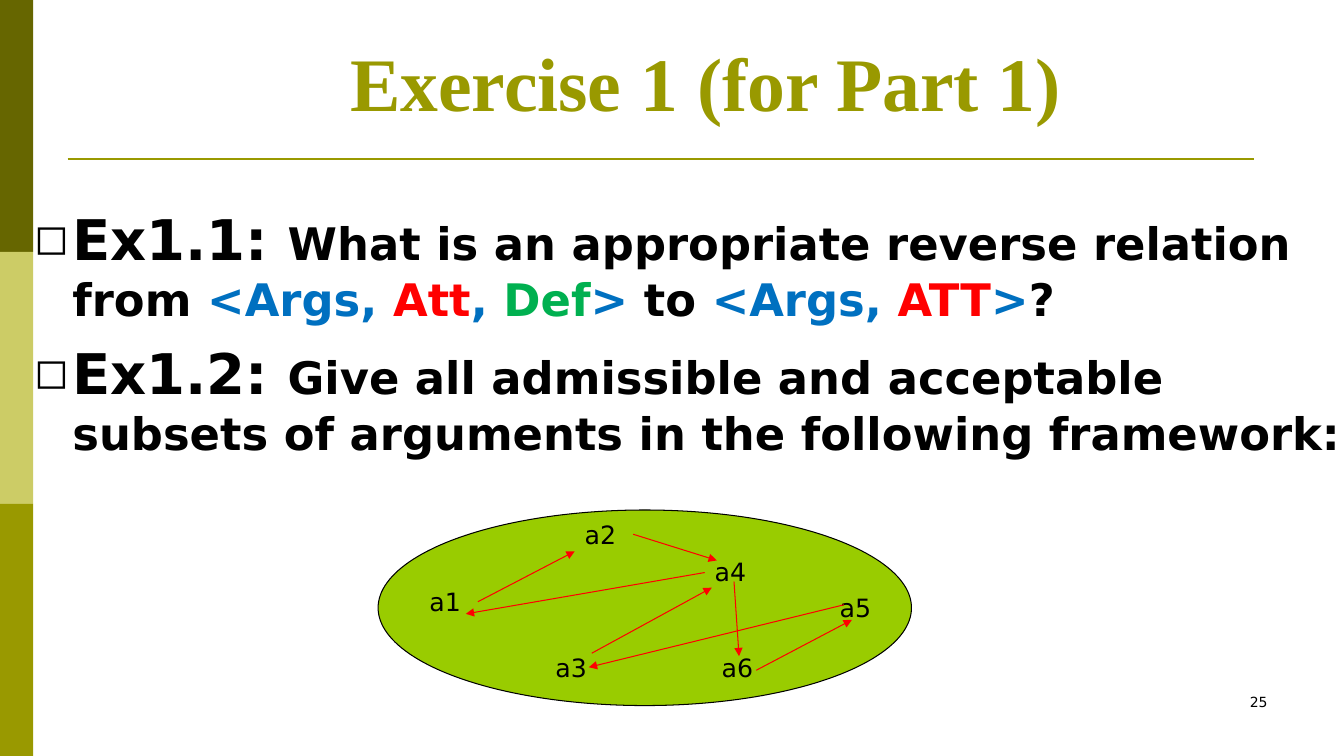
from lxml.etree import SubElement as Sub
from pptx import Presentation
from pptx.dml.color import RGBColor as RGB
from pptx.enum.shapes import MSO_CONNECTOR as Conn, MSO_SHAPE as Shape
from pptx.enum.text import MSO_ANCHOR as Anchor, MSO_AUTO_SIZE as Fit, PP_ALIGN as Align
from pptx.oxml.ns import qn
from pptx.util import Inches, Pt

SANS, SERIF = "DejaVu Sans", "Times New Roman"
COLORS = {
    "black": "000000", "dark": "666600", "pale": "CCCC66", "olive": "999900",
    "lime": "99CC00", "red": "FF0000", "blue": "0070C0", "green": "00B050",
}
TASKS = [
    [("Ex1.1: ", 40, "black"),
     ("What is an appropriate reverse relation from ", 32, "black"),
     ("<Args, ", 32, "blue"), ("Att", 32, "red"), (", ", 32, "blue"),
     ("Def", 32, "green"), (">", 32, "blue"), (" to ", 32, "black"),
     ("<Args, ", 32, "blue"), ("ATT", 32, "red"), (">", 32, "blue"),
     ("?", 32, "black")],
    [("Ex1.2: ", 40, "black"),
     ("Give all admissible and acceptable subsets of arguments"
      " in the following framework:", 32, "black")],
]
# Places in the graph are offsets from the top left of the ellipse.
NODES = {
    "a1": (0.41, 0.71), "a2": (1.95, 0.04), "a3": (1.66, 1.36),
    "a4": (3.24, 0.41), "a5": (4.48, 0.77), "a6": (3.31, 1.36),
}
ATTACKS = [
    ((0.99, 0.91), (1.95, 0.41)),  # a1 to a2
    ((2.12, 1.42), (3.31, 0.77)),  # a3 to a4
    ((3.75, 1.59), (4.7, 1.09)),   # a6 to a5
    ((4.62, 0.94), (2.09, 1.56)),  # a5 to a3
    ((3.24, 0.62), (0.87, 1.03)),  # a4 to a1
    ((3.53, 0.71), (3.58, 1.45)),  # a4 to a6
    ((2.53, 0.24), (3.36, 0.5)),   # a2 to a4
]


def color(name):
    return RGB.from_string(COLORS[name])


def style(font, size, hue, name=SANS, bold=False):
    font.name, font.size, font.bold = name, Pt(size), bold
    font.color.rgb = color(hue)


def add_box(slide, box):
    """Add an empty wrapping text box and return its frame."""
    frame = slide.shapes.add_textbox(*map(Inches, box)).text_frame
    frame.word_wrap = True
    return frame


def add_text(slide, box, text, size, hue="black", align=Align.LEFT, **look):
    frame = add_box(slide, box)
    para = frame.paragraphs[0]
    para.text, para.alignment = text, align
    style(para.font, size, hue, **look)
    return frame


def add_fill(slide, kind, box, hue):
    shape = slide.shapes.add_shape(kind, *map(Inches, box))
    shape.shadow.inherit = False
    shape.fill.solid()
    shape.fill.fore_color.rgb = color(hue)
    shape.line.fill.background()
    return shape


def add_line(slide, start, end, hue, width, arrow=False):
    line = slide.shapes.add_connector(
        Conn.STRAIGHT, *map(Inches, (*start, *end)))
    line.line.color.rgb = color(hue)
    line.line.width = Pt(width)
    if arrow:
        Sub(line.line._get_or_add_ln(), qn("a:tailEnd"), type="triangle")
    Sub(line._element.spPr, qn("a:effectLst"))


def add_bullet(para):
    """Give the paragraph a hanging hollow square."""
    props = para._p.get_or_add_pPr()
    indent = Inches(0.38)
    props.set("marL", str(indent))
    props.set("indent", str(-indent))
    hue = Sub(props, qn("a:buClr"))
    Sub(hue, qn("a:srgbClr"), val=COLORS["black"])
    Sub(props, qn("a:buSzPct"), val="75000")
    Sub(props, qn("a:buFont"), typeface=SANS)
    Sub(props, qn("a:buChar"), char="◻")


def add_stripe(slide, left, top, width, height):
    hues = ("dark", "pale", "olive")
    step = height / len(hues)
    for i, hue in enumerate(hues):
        add_fill(slide, Shape.RECTANGLE, (left, top + i * step, width, step), hue)


def add_title(slide, box):
    frame = add_text(slide, box, "Exercise 1 (for Part 1)", 54, "olive",
                     Align.CENTER, name=SERIF, bold=True)
    frame.vertical_anchor = Anchor.BOTTOM


def add_tasks(slide, box):
    frame = add_box(slide, box)
    for i, task in enumerate(TASKS):
        para = frame.add_paragraph() if i else frame.paragraphs[0]
        para.space_before = Pt(9)
        add_bullet(para)
        for text, size, hue in task:
            run = para.add_run()
            run.text = text
            style(run.font, size, hue, bold=True)


def add_graph(slide, left, top, width, height):
    oval = add_fill(slide, Shape.OVAL, (left, top, width, height), "lime")
    oval.line.color.rgb = color("black")
    oval.line.width = Pt(0.75)
    for name, (x, y) in NODES.items():
        frame = add_text(slide, (left + x, top + y, 0.58, 0.4), name, 18)
        frame.auto_size = Fit.SHAPE_TO_FIT_TEXT
    for ends in ATTACKS:
        start, end = [(left + x, top + y) for x, y in ends]
        add_line(slide, start, end, "red", 0.75, arrow=True)


def main():
    deck = Presentation()
    deck.slide_width, deck.slide_height = Inches(13.33), Inches(7.5)
    slide = deck.slides.add_slide(deck.slide_layouts[6])
    add_stripe(slide, 0, 0, 0.33, 7.5)
    add_line(slide, (0.67, 1.58), (12.44, 1.58), "olive", 1.5)
    add_title(slide, (1, 0.06, 12, 1.25))
    add_text(slide, (9.56, 6.83, 3.11, 0.5), "25", 10, align=Align.RIGHT)
    add_tasks(slide, (0.24, 1.98, 13.3, 5.67))
    add_graph(slide, 3.75, 5.06, 5.29, 1.94)
    deck.save("out.pptx")


if __name__ == "__main__":
    main()
